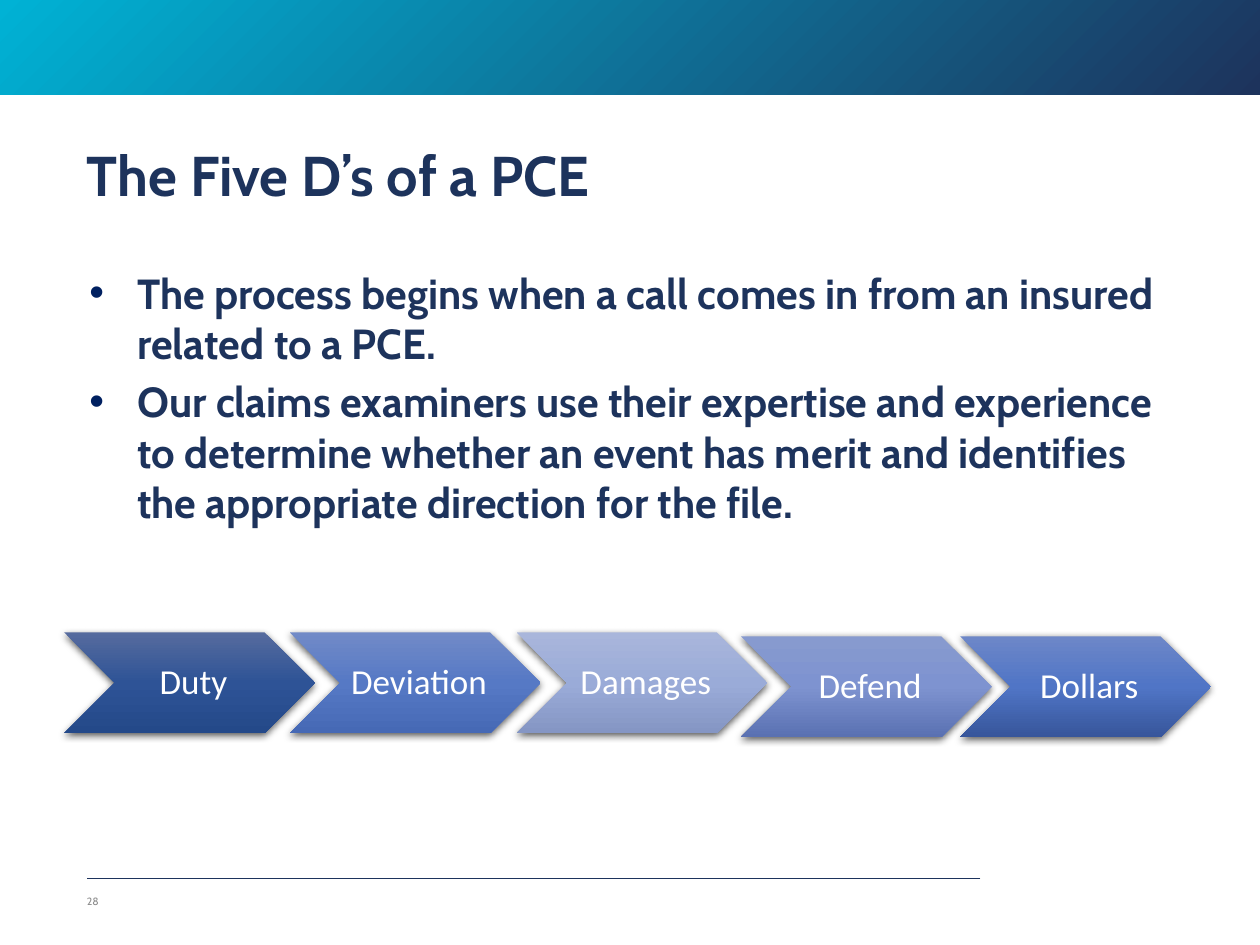
from lxml import etree
from pptx import Presentation
from pptx.dml.color import RGBColor
from pptx.enum import shapes, text
from pptx.oxml import parse_xml
from pptx.oxml.ns import nsdecls, qn
from pptx.util import Inches, Pt

TITLE = "The Five D’s of a PCE"
POINTS = [
    "The process begins when a call comes in from an insured related to a PCE.",
    "Our claims examiners use their expertise and experience to determine whether "
    "an event has merit and identifies the appropriate direction for the file.",
]
PAGE_NUMBER = "28"
STEPS = [
    ("Duty", 0.51, 5.02, ("566B9E", "2E5396", "244989")),
    ("Deviation", 2.3, 5.02, ("718AC7", "5679C5", "4669B5")),
    ("Damages", 4.1, 5.02, ("A9B6DB", "9AABD8", "8596C4")),
    ("Defend", 5.88, 5.05, ("879ACF", "7E93D0", "5A71B2")),
    ("Dollars", 7.62, 5.05, ("6D87C8", "5075C6", "37569B")),
]
NAVY, CYAN, GREY, WHITE, BULLET = "1D335C", "00B2D5", "8C8C8C", "FFFFFF", "002060"
DOWNWARD = '<a:lin ang="5400000" scaled="0"/>'
FROM_CORNER = '<a:path path="circle"><a:fillToRect l="100000" t="100000"/></a:path>'


def rgb(code):
    return RGBColor.from_string(code)


def place(part, left, top, width, height):
    part.left, part.top = Inches(left), Inches(top)
    part.width, part.height = Inches(width), Inches(height)


def set_frame(frame, anchor, margins=(0, 0, 0, 0), wrap=True):
    frame.word_wrap = wrap
    frame.auto_size = text.MSO_AUTO_SIZE.NONE
    frame.vertical_anchor = anchor
    (frame.margin_left, frame.margin_top,
     frame.margin_right, frame.margin_bottom) = map(Inches, margins)


def style(paragraph, face, size, color, bold=False):
    font = paragraph.font
    font.name, font.size, font.bold = face, Pt(size), bold
    font.color.rgb = rgb(color)


def fill_gradient(shape, colors, direction):
    shape.line.fill.background()
    shape.fill.background()
    last = len(colors) - 1
    stops = "".join(
        f'<a:gs pos="{100000 * i // last}"><a:srgbClr val="{color}"/></a:gs>'
        for i, color in enumerate(colors))
    gradient = parse_xml(f'<a:gradFill {nsdecls("a")} rotWithShape="1">'
                         f'<a:gsLst>{stops}</a:gsLst>{direction}</a:gradFill>')
    properties = shape._element.spPr
    properties.replace(properties.find(qn("a:noFill")), gradient)


def add_shadow(shape):
    shape.shadow.inherit = False
    effects = shape._element.spPr.find(qn("a:effectLst"))
    effects.append(parse_xml(
        f'<a:outerShdw {nsdecls("a")} blurRad="{Pt(4.5)}" dist="{Pt(1.5)}" '
        'dir="5400000" algn="ctr" rotWithShape="0"><a:srgbClr val="000000">'
        '<a:alpha val="63000"/></a:srgbClr></a:outerShdw>'))


def add_bullet(paragraph):
    properties = paragraph._p.get_or_add_pPr()
    properties.set("marL", str(Inches(0.38)))
    properties.set("indent", str(-Inches(0.38)))
    color = etree.SubElement(properties, qn("a:buClr"))
    etree.SubElement(color, qn("a:srgbClr"), val=BULLET)
    etree.SubElement(properties, qn("a:buFont"), typeface="Arial")
    etree.SubElement(properties, qn("a:buChar"), char="•")


def add_header_and_footer(slide):
    band = slide.shapes.add_shape(shapes.MSO_SHAPE.RECTANGLE, 0, 0, Inches(10), Inches(0.75))
    fill_gradient(band, (NAVY, CYAN), FROM_CORNER)
    band.shadow.inherit = False

    rule = slide.shapes.add_connector(shapes.MSO_CONNECTOR.STRAIGHT, Inches(7.78),
                                      Inches(6.97), Inches(0.69), Inches(6.97))
    rule.line.color.rgb = rgb(NAVY)
    rule.line.width = Pt(0.4)
    etree.SubElement(rule._element.spPr, qn("a:effectLst"))

    number = slide.shapes.add_textbox(Inches(0.69), Inches(6.95), Inches(0.38), Inches(0.4))
    set_frame(number.text_frame, text.MSO_ANCHOR.MIDDLE)
    number.text_frame.text = PAGE_NUMBER
    style(number.text_frame.paragraphs[0], "Cabin", 6, GREY)


def fill_placeholders(slide):
    title, body = slide.shapes.title, slide.placeholders[1]
    place(title, 0.69, 0.83, 8.62, 1.17)
    set_frame(title.text_frame, text.MSO_ANCHOR.MIDDLE)
    title.text_frame.text = TITLE
    heading = title.text_frame.paragraphs[0]
    heading.alignment = text.PP_ALIGN.LEFT
    heading.line_spacing = 0.9
    style(heading, "Cabin", 32, NAVY, bold=True)

    place(body, 0.71, 2.12, 8.6, 4.76)
    set_frame(body.text_frame, text.MSO_ANCHOR.TOP)
    body.text_frame.text = "\n".join(POINTS)
    for i, point in enumerate(body.text_frame.paragraphs):
        add_bullet(point)
        point.space_before = Pt(4.5 if i else 0)
        style(point, "Cabin", 24, NAVY, bold=True)


def add_step(slide, label, left, top, colors):
    chevron = slide.shapes.add_shape(shapes.MSO_SHAPE.CHEVRON, Inches(left), Inches(top),
                                     Inches(1.99), Inches(0.8))
    fill_gradient(chevron, colors, DOWNWARD)
    add_shadow(chevron)
    set_frame(chevron.text_frame, text.MSO_ANCHOR.MIDDLE, (0.09, 0.03, 0.03, 0.03), wrap=False)
    chevron.text_frame.text = label
    caption = chevron.text_frame.paragraphs[0]
    caption.alignment = text.PP_ALIGN.CENTER
    caption.line_spacing = 0.9
    style(caption, "Calibri", 20, WHITE)


def main():
    deck = Presentation()
    deck.slide_width, deck.slide_height = Inches(10), Inches(7.5)
    slide = deck.slides.add_slide(deck.slide_layouts[1])
    add_header_and_footer(slide)
    fill_placeholders(slide)
    for step in STEPS:
        add_step(slide, *step)
    deck.save("out.pptx")


if __name__ == "__main__":
    main()
